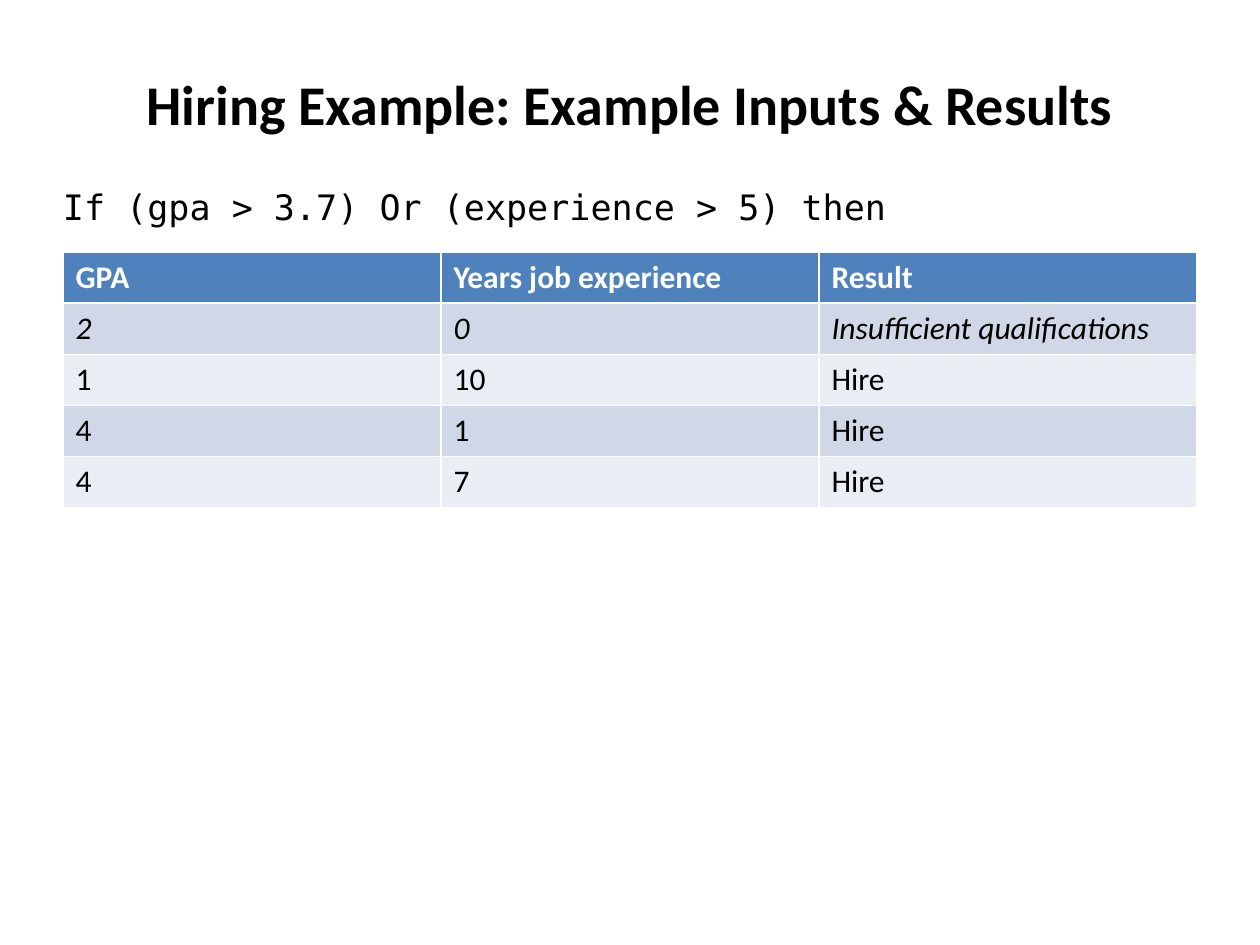
from pptx import Presentation
from pptx.dml.color import RGBColor
from pptx.enum.text import MSO_ANCHOR, MSO_AUTO_SIZE, PP_ALIGN
from pptx.util import Inches, Pt

MIDDLE = MSO_ANCHOR.MIDDLE
CENTER = PP_ALIGN.CENTER
GROW = MSO_AUTO_SIZE.SHAPE_TO_FIT_TEXT
TITLE_ONLY = 5

BLACK = RGBColor(0x00, 0x00, 0x00)
WHITE = RGBColor(0xFF, 0xFF, 0xFF)
HEADER_BLUE = RGBColor(0x4F, 0x81, 0xBD)
BANDS = (RGBColor(0xE9, 0xED, 0xF4), RGBColor(0xD0, 0xD8, 0xE8))

BODY_FONT = "Calibri"
CODE_FONT = "DejaVu Sans Mono"

RESULTS = [
    ("GPA", "Years job experience", "Result"),
    ("2", "0", "Insufficient qualifications"),
    ("1", "10", "Hire"),
    ("4", "1", "Hire"),
    ("4", "7", "Hire"),
]
REJECTED_ROW = 1


def set_font(para, name, size, color, bold=False, italic=False):
    font = para.font
    font.name, font.size = name, Pt(size)
    font.bold, font.italic = bold, italic
    font.color.rgb = color


def place_title(page, text, left, top, width, height):
    title = page.shapes.title
    title.left, title.top = left, top
    title.width, title.height = width, height
    frame = title.text_frame
    frame.text = text
    frame.vertical_anchor = MIDDLE
    para = frame.paragraphs[0]
    para.alignment = CENTER
    set_font(para, BODY_FONT, 32, BLACK, bold=True)


def add_condition(page, text, left, top, width, height):
    frame = page.shapes.add_textbox(left, top, width, height).text_frame
    frame.word_wrap = True
    frame.auto_size = GROW
    frame.margin_left = Inches(0.17)
    frame.text = text
    set_font(frame.paragraphs[0], CODE_FONT, 20, BLACK)


def add_results_table(page, rows, left, top, width, height):
    """Add the table; white rules and the thick header rule come from its style."""
    table = page.shapes.add_table(
        len(rows), len(rows[0]), left, top, width, height
    ).table
    for row_number, values in enumerate(rows):
        header = row_number == 0
        for column, value in enumerate(values):
            cell = table.cell(row_number, column)
            cell.text = value
            cell.fill.solid()
            cell.fill.fore_color.rgb = HEADER_BLUE if header else BANDS[row_number % 2]
            set_font(
                cell.text_frame.paragraphs[0],
                BODY_FONT,
                18,
                WHITE if header else BLACK,
                bold=header,
                italic=row_number == REJECTED_ROW,
            )


def main():
    deck = Presentation()
    deck.slide_width, deck.slide_height = Inches(10), Inches(7.5)
    page = deck.slides.add_slide(deck.slide_layouts[TITLE_ONLY])
    left, width = Inches(0.5), Inches(9)

    place_title(page, "Hiring Example: Example Inputs & Results",
                left, Inches(0.3), width, Inches(1.03))
    add_results_table(page, RESULTS, left, Inches(2), width, Inches(2.03))
    add_condition(page, "If (gpa > 3.7) Or (experience > 5) then",
                  Inches(0.33), Inches(1.42), width, Inches(0.44))
    deck.save("out.pptx")


if __name__ == "__main__":
    main()
